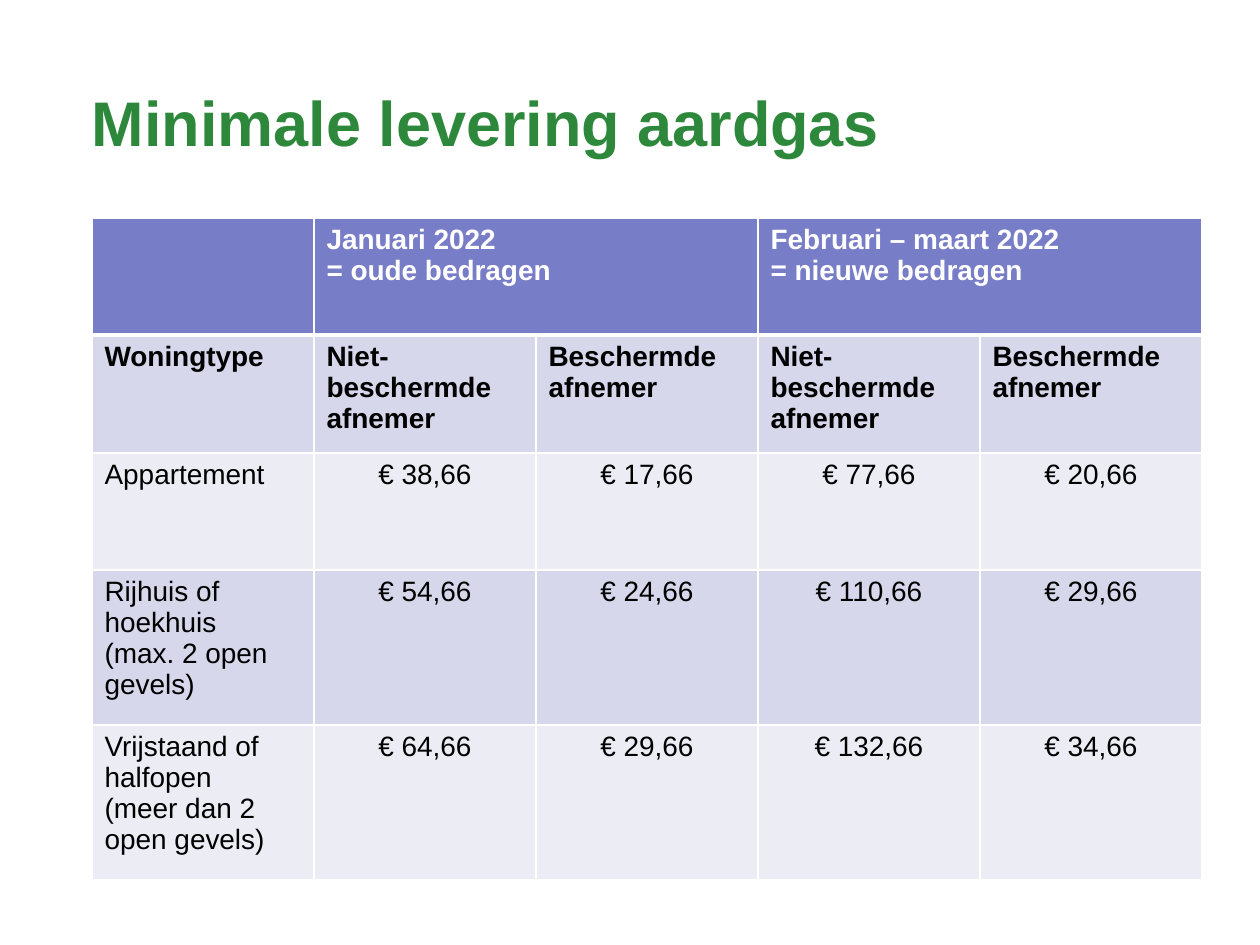
from lxml.etree import SubElement
from pptx import Presentation
from pptx.dml.color import RGBColor
from pptx.enum.text import PP_ALIGN
from pptx.oxml.ns import qn
from pptx.util import Pt

PX = 914400 // 126
COLORS = {"title": "2D883C", "header": "787DC8", "dark": "D6D7EB",
          "light": "ECECF5", "white": "FFFFFF", "black": "000000"}


class SlideBuilder:
    font = "Arial"

    def __init__(self, slide):
        self.s = slide

    def paragraphs(self, tf, lines, size, color, bold=False, align=PP_ALIGN.LEFT,
                   spacing=None):
        style = {"name": self.font, "size": Pt(size), "bold": bold}
        for i, line in enumerate(lines):
            p = tf.add_paragraph() if i else tf.paragraphs[0]
            p.alignment = align
            p.line_spacing = spacing
            r = p.add_run()
            r.text = line
            for name, value in style.items():
                setattr(r.font, name, value)
            r.font.color.rgb = RGBColor.from_string(COLORS[color])

    def text(self, box, lines, inset_top=0, **style):
        sp = self.s.shapes.add_textbox(*(v * PX for v in box))
        tf = sp.text_frame
        tf.word_wrap = True
        margins = {"margin_left": 0, "margin_right": 0,
                   "margin_top": inset_top * PX, "margin_bottom": 0}
        for name, value in margins.items():
            setattr(tf, name, value)
        self.paragraphs(tf, lines, **style)

    def table(self, left, top, col_width, heights, cols):
        width, height = col_width * cols, sum(heights)
        frame = self.s.shapes.add_table(len(heights), cols, left * PX, top * PX,
                                        width * PX, height * PX)
        table = frame.table
        for column in table.columns:
            column.width = col_width * PX
        for row, h in zip(table.rows, heights):
            row.height = h * PX
        return table

    def cell(self, cell, fill, borders):
        # Borders must precede the fill in the cell properties
        tcPr = cell._tc.get_or_add_tcPr()
        for side, width in borders.items():
            ln = SubElement(tcPr, qn(f"a:ln{side}"), w=str(int(Pt(width))))
            SubElement(SubElement(ln, qn("a:solidFill")), qn("a:srgbClr"),
                       val=COLORS["white"])
        cell.fill.solid()
        cell.fill.fore_color.rgb = RGBColor.from_string(COLORS[fill])


ROWS = [
    ["", "Januari 2022\n= oude bedragen", "", "Februari – maart 2022\n= nieuwe bedragen", ""],
    ["Woningtype", "Niet- beschermde afnemer", "Beschermde afnemer",
     "Niet-beschermde afnemer", "Beschermde afnemer"],
    ["Appartement", "€ 38,66", "€ 17,66", "€ 77,66", "€ 20,66"],
    ["Rijhuis of hoekhuis\n(max. 2 open gevels)", "€ 54,66", "€ 24,66", "€ 110,66", "€ 29,66"],
    ["Vrijstaand of halfopen\n(meer dan 2 open gevels)",
     "€ 64,66", "€ 29,66", "€ 132,66", "€ 34,66"],
]


def main():
    prs = Presentation()
    prs.slide_width, prs.slide_height = 1260 * PX, 945 * PX
    b = SlideBuilder(prs.slides.add_slide(prs.slide_layouts[6]))

    # Title
    b.text((92, 89, 810, 139), ["Minimale levering aardgas"], inset_top=6,
           size=36, color="title", bold=True, spacing=0.86)

    # Tariff table
    table = b.table(92, 218, 222, [117, 118, 117, 155, 155], cols=5)
    for i, row in enumerate(ROWS):
        fill = "header" if i == 0 else "dark" if i % 2 else "light"
        borders = {"L": 1, "R": 1, "T": 3 if i == 1 else 1, "B": 3 if i == 0 else 1}
        for j, text in enumerate(row):
            cell = table.cell(i, j)
            b.cell(cell, fill, borders)
            if text:
                amount = i > 1 and j > 0
                b.paragraphs(cell.text_frame, text.split("\n"), size=16, bold=i < 2,
                             color="black" if i else "white",
                             align=PP_ALIGN.CENTER if amount else PP_ALIGN.LEFT)

    # Each period spans two customer columns
    for j in (1, 3):
        table.cell(0, j).merge(table.cell(0, j + 1))

    prs.save("out.pptx")


if __name__ == "__main__":
    main()
